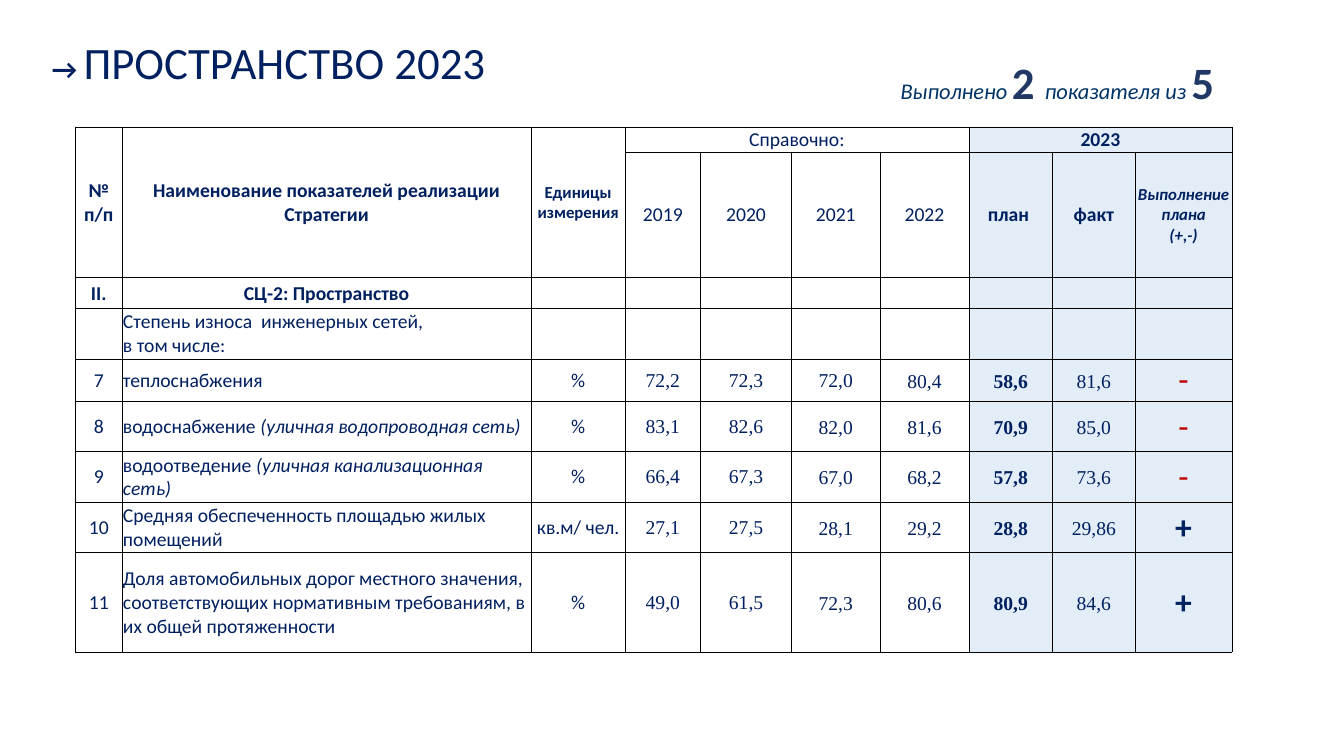
from dataclasses import dataclass, field

from lxml import etree
from pptx import Presentation
from pptx.dml.color import RGBColor
from pptx.enum.text import MSO_ANCHOR, MSO_AUTO_SIZE, PP_ALIGN
from pptx.oxml.ns import qn
from pptx.util import Inches, Pt

CENTER, LEFT, RIGHT = PP_ALIGN.CENTER, PP_ALIGN.LEFT, PP_ALIGN.RIGHT
MIDDLE = MSO_ANCHOR.MIDDLE
FIT_SHAPE = MSO_AUTO_SIZE.SHAPE_TO_FIT_TEXT

NAVY, TEAL, INDIGO, RED = "002060", "003366", "203864", "C00000"
WHITE, PALE_BLUE, BLACK = "FFFFFF", "DEEBF7", "000000"
SERIF = "Times New Roman"
BOLD = {"bold": True}
ITALIC = {"italic": True}
SMALL = {"size": Pt(12), "bold": True}
BASE = {"name": "Calibri", "size": Pt(14), "bold": False, "italic": False}

COLUMN_WIDTHS = [0.46, 4.06, 0.93, 0.75, 0.9, 0.88, 0.88, 0.83, 0.82, 0.96]
ROW_HEIGHTS = [0.25, 1.24, 0.31, 0.5, 0.42, 0.5, 0.5, 0.5, 0.99]
FIRST_2023_COLUMN = 7
FIRST_INDICATOR_ROW = 4


@dataclass
class Span:
    text: str
    style: dict = field(default_factory=dict)
    color: str = NAVY


@dataclass
class CellText:
    row: int
    column: int
    paragraphs: list[list[Span]]
    align: int = CENTER
    spaced: bool = False


@dataclass
class Indicator:
    number: str
    name: list[Span]
    unit: str
    values: list[str]
    result: str


HEADINGS = [
    CellText(0, 0, [[Span("№ п/п", BOLD)]]),
    CellText(0, 1, [[Span("Наименование показателей реализации Стратегии", BOLD)]]),
    CellText(0, 2, [[Span("Единицы измерения", SMALL)]]),
    CellText(0, 3, [[Span("Справочно:")]]),
    CellText(0, 7, [[Span("2023", BOLD)]]),
    *[CellText(1, 3 + step, [[Span(str(2019 + step))]]) for step in range(4)],
    CellText(1, 7, [[Span("план ", BOLD)]]),
    CellText(1, 8, [[Span("факт", BOLD)]]),
    CellText(1, 9, [[Span("Выполнение плана", SMALL | ITALIC)],
                    [Span("(+,-)", SMALL | ITALIC)]]),
    CellText(2, 0, [[Span("II.", BOLD)]]),
    CellText(2, 1, [[Span("СЦ-2: Пространство", BOLD)]]),
    CellText(3, 1, [[Span("Степень износа  инженерных сетей,\nв том числе:")]], LEFT),
]

# First and last cell of each merged area
MERGES = [((0, column), (1, column)) for column in range(3)]
MERGES += [((0, 3), (0, 6)), ((0, 7), (0, 9))]

INDICATORS = [
    Indicator("7", [Span("теплоснабжения")], "%",
              ["72,2", "72,3", "72,0", "80,4", "58,6", "81,6"], "-"),
    Indicator("8", [Span("водоснабжение "), Span("(уличная водопроводная сеть)", ITALIC)], "%",
              ["83,1", "82,6", "82,0", "81,6", "70,9", "85,0"], "-"),
    Indicator("9", [Span("водоотведение"), Span(" (уличная канализационная сеть)", ITALIC)], "%",
              ["66,4", "67,3", "67,0", "68,2", "57,8", "73,6"], "-"),
    Indicator("10", [Span("Средняя обеспеченность площадью жилых помещений")], "кв.м/ чел.",
              ["27,1", "27,5", "28,1", "29,2", "28,8", "29,86"], "+"),
    Indicator("11", [Span("Доля автомобильных дорог местного значения, соответствующих "
                          "нормативным требованиям, в их общей протяженности")], "%",
              ["49,0", "61,5", "72,3", "80,6", "80,9", "84,6"], "+"),
]


def rgb(color: str) -> RGBColor:
    return RGBColor.from_string(color)


def write_spans(para, spans: list[Span], align: int) -> None:
    para.alignment = align
    for span in spans:
        for index, line in enumerate(span.text.split("\n")):
            if index:
                para.add_line_break()
            run = para.add_run()
            run.text = line
            for name, value in (BASE | span.style).items():
                setattr(run.font, name, value)
            run.font.color.rgb = rgb(span.color)


def add_text(page, place: list[float], spans: list[Span], align: int, wrap: bool) -> None:
    box = page.shapes.add_textbox(*map(Inches, place))
    box.text_frame.word_wrap = wrap
    box.text_frame.auto_size = FIT_SHAPE
    write_spans(box.text_frame.paragraphs[0], spans, align)


def set_margins(cell, side: float, top: float) -> None:
    cell.margin_left = cell.margin_right = Inches(side)
    cell.margin_top, cell.margin_bottom = Inches(top), 0


def style_cell(cell, column: int) -> None:
    set_margins(cell, 0.01, 0.01)
    cell.vertical_anchor = MIDDLE
    highlighted = column >= FIRST_2023_COLUMN
    cell.fill.solid()
    cell.fill.fore_color.rgb = rgb(PALE_BLUE if highlighted else WHITE)
    properties = cell._tc.get_or_add_tcPr()
    if highlighted:
        tint = properties.find(".//" + qn("a:srgbClr"))
        etree.SubElement(tint, qn("a:alpha"), val="85000")
    # Borders come before the fill in the cell properties
    for index, side in enumerate(["a:lnL", "a:lnR", "a:lnT", "a:lnB"]):
        border = etree.Element(qn(side), w=str(Pt(0.5)))
        paint = etree.SubElement(border, qn("a:solidFill"))
        etree.SubElement(paint, qn("a:srgbClr"), val=BLACK)
        properties.insert(index, border)


def fill_cell(table, content: CellText) -> None:
    cell = table.cell(content.row, content.column)
    if content.spaced:
        set_margins(cell, 0.07, 0)
    for index, spans in enumerate(content.paragraphs):
        frame = cell.text_frame
        para = frame.add_paragraph() if index else frame.paragraphs[0]
        write_spans(para, spans, content.align)
        if content.spaced:
            para.line_spacing = 1.15


def indicator_cells(row: int, indicator: Indicator) -> list[CellText]:
    met = indicator.result == "+"
    result = Span(indicator.result, {"size": Pt(24), "bold": met}, NAVY if met else RED)
    cells = [
        CellText(row, 0, [[Span(indicator.number)]]),
        CellText(row, 1, [indicator.name], LEFT),
        CellText(row, 2, [[Span(indicator.unit)]]),
        CellText(row, 9, [[result]]),
    ]
    first_spaced = 6 if row == FIRST_INDICATOR_ROW else 5
    for column, value in enumerate(indicator.values, start=3):
        style = {"name": SERIF, "bold": column == FIRST_2023_COLUMN}
        cells.append(CellText(row, column, [[Span(value, style)]],
                              spaced=column >= first_spaced))
    return cells


def add_indicator_table(page) -> None:
    frame = page.shapes.add_table(len(ROW_HEIGHTS), len(COLUMN_WIDTHS), Inches(0.75),
                                  Inches(1.26), Inches(11.47), Inches(5.2))
    table = frame.table
    table.first_row = table.horz_banding = False
    for column, width in zip(table.columns, COLUMN_WIDTHS):
        column.width = Inches(width)
    for row, height in zip(table.rows, ROW_HEIGHTS):
        row.height = Inches(height)
        for index, cell in enumerate(row.cells):
            style_cell(cell, index)
    for first, last in MERGES:
        table.cell(*first).merge(table.cell(*last))
    contents = list(HEADINGS)
    for row, indicator in enumerate(INDICATORS, start=FIRST_INDICATOR_ROW):
        contents += indicator_cells(row, indicator)
    for content in contents:
        fill_cell(table, content)


def main() -> None:
    deck = Presentation()
    deck.slide_width, deck.slide_height = Inches(13.33), Inches(7.5)
    page = deck.slides.add_slide(deck.slide_layouts[6])

    # Title
    add_text(page, [0.39, 0.3, 4.55, 0.64],
             [Span("→ ", {"size": Pt(20), "bold": True}),
              Span("ПРОСТРАНСТВО 2023", {"size": Pt(32)})], CENTER, wrap=False)

    # Indicators by year
    add_indicator_table(page)

    # Summary of met indicators
    words = {"size": Pt(16), "italic": True}
    count = {"size": Pt(32), "bold": True}
    add_text(page, [8.69, 0.49, 3.45, 0.64],
             [Span("Выполнено", words, TEAL), Span(" ", ITALIC, TEAL),
              Span("2 ", count, INDIGO), Span("показателя из ", words, TEAL),
              Span("5", count, INDIGO)], RIGHT, wrap=True)

    deck.save("out.pptx")


if __name__ == "__main__":
    main()
